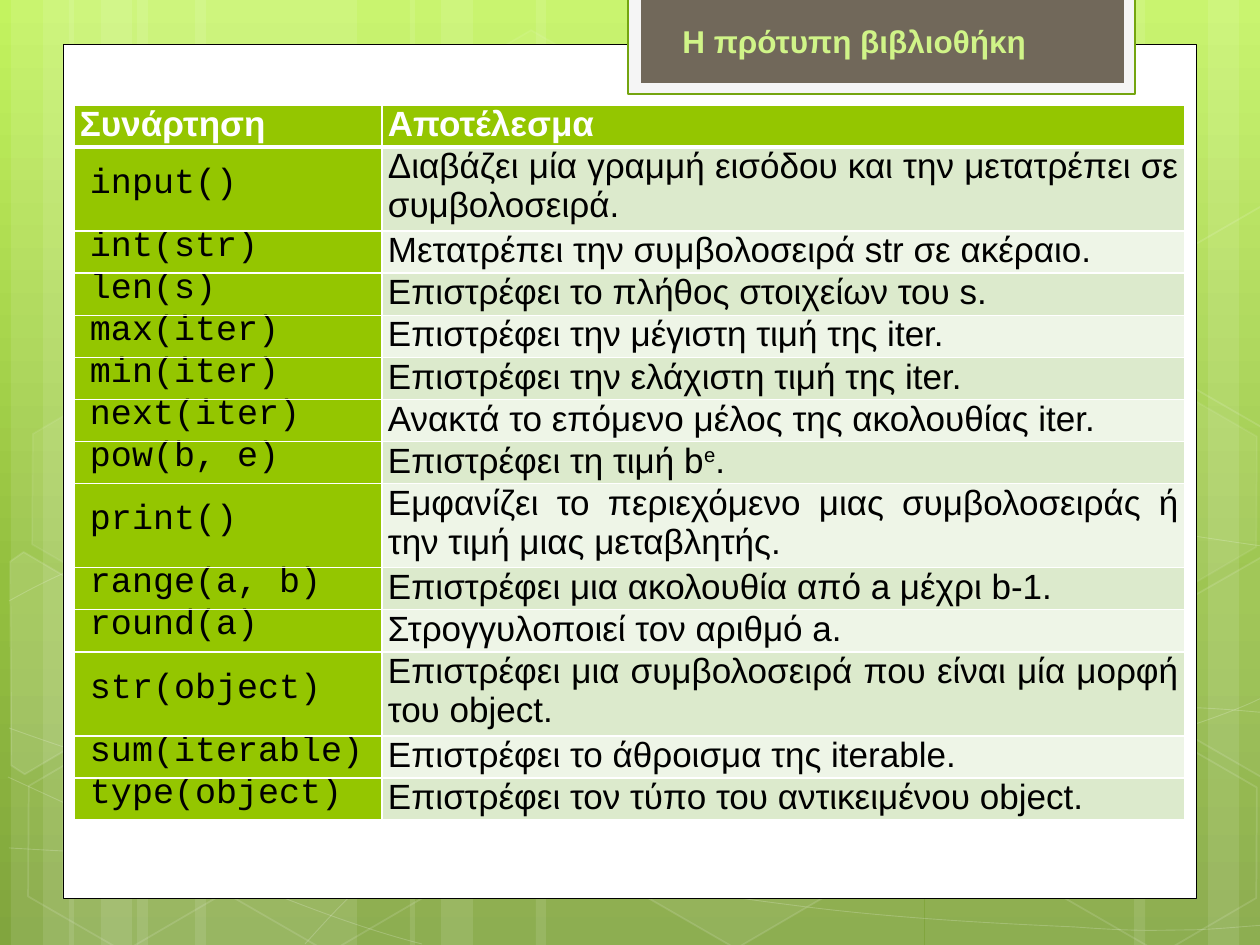
import math

import lxml.etree
import pptx
import pptx.dml.color
import pptx.enum.shapes
import pptx.enum.text
import pptx.oxml.ns
import pptx.util

SCALE = 914400 / 126
COLORS = {
    "white": "FFFFFF", "black": "000000", "sky": "C3F35F", "grass": "93BF3F",
    "moss": "81A53E", "tab": "F5F5F5", "tab_line": "74A510", "plate": "71685A",
    "title": "D0F488", "green": "94C600", "odd_row": "DCEACC", "even_row": "EEF5E7",
}
SHAPES = pptx.enum.shapes.MSO_SHAPE
ALIGN = pptx.enum.text.PP_ALIGN
ANCHOR = pptx.enum.text.MSO_ANCHOR
qn = pptx.oxml.ns.qn

BANDS = [(137, 220, 0), (11, 63, 0), (43, 105, 0), (195, 220, 0), (69, 63, 0), (101, 105, 0),
         (925, 220, 180), (1208, 63, 180), (1134, 105, 180),
         (536, 388, 0), (410, 63, 0), (441, 105, 0)]
CURVES = [
    [(9, 848), (77, 852), (145, 856), (239, 854), (334, 853), (451, 851), (577, 838),
     (703, 825), (882, 801), (998, 777), (1113, 753), (1231, 716), (1269, 694)],
    [(9, 601), (45, 581), (82, 562), (152, 543), (224, 524), (326, 496), (437, 488),
     (549, 479), (685, 478), (824, 488), (963, 498), (1193, 537), (1269, 547)],
    [(8, 777), (160, 847), (311, 916), (422, 944)],
    [(9, 728), (48, 742), (88, 756), (161, 776), (234, 795), (344, 827), (450, 848),
     (554, 869), (687, 892), (791, 905), (896, 919), (1008, 924), (1075, 927),
     (1142, 932), (1158, 930), (1191, 930), (1223, 929), (1246, 926), (1269, 925)],
    [(305, 944), (328, 919), (350, 893), (381, 871), (411, 847), (454, 823), (489, 805),
     (524, 788), (546, 780), (591, 767), (638, 755), (722, 737), (766, 728),
     (811, 719), (818, 719), (857, 717), (896, 713), (958, 709), (1000, 708),
     (1045, 707), (1116, 708), (1116, 708), (1116, 708), (1201, 708), (1201, 708),
     (1223, 709), (1245, 711), (1256, 712), (1268, 713), (1264, 712), (1268, 713)],
]
HEXAGONS = [(421, 45, 4, 8), (626, 742, 6, 12), (14, 745, 0, 12), (18, 393, 7, 8),
            (219, 746, 0, 12), (949, 571, 10, 12), (1051, 747, 0, 12), (1051, 396, 7, 8)]
CUT_HEXAGONS = [
    ((45, 675), [(10, 561), (24, 552), (121, 609), (120, 718), (25, 774), (11, 765)], 10),
    ((1241, 655), [(1167, 611), (1263, 556), (1271, 562), (1271, 772), (1263, 777),
                   (1167, 722)], 4),
    ((1241, 304), [(1167, 261), (1263, 205), (1273, 212), (1271, 422), (1263, 427),
                   (1167, 372)], 0),
]
TILT = 30
FUNCTIONS = [
    ("input()", "Διαβάζει μία γραμμή εισόδου και την μετατρέπει σε συμβολοσειρά."),
    ("int(str)", "Μετατρέπει την συμβολοσειρά str σε ακέραιο."),
    ("len(s)", "Επιστρέφει το πλήθος στοιχείων του s."),
    ("max(iter)", "Επιστρέφει την μέγιστη τιμή της iter."),
    ("min(iter)", "Επιστρέφει την ελάχιστη τιμή της iter."),
    ("next(iter)", "Ανακτά το επόμενο μέλος της ακολουθίας iter."),
    ("pow(b, e)", "Επιστρέφει τη τιμή b^e^."),
    ("print()", "Εμφανίζει το περιεχόμενο μιας συμβολοσειράς ή την τιμή μιας μεταβλητής."),
    ("range(a, b)", "Επιστρέφει μια ακολουθία από a μέχρι b-1."),
    ("round(a)", "Στρογγυλοποιεί τον αριθμό a."),
    ("str(object)", "Επιστρέφει μια συμβολοσειρά που είναι μία μορφή του object."),
    ("sum(iterable)", "Επιστρέφει το άθροισμα της iterable."),
    ("type(object)", "Επιστρέφει τον τύπο του αντικειμένου object."),
]
TWO_LINE_ROWS = {"input()", "print()", "str(object)"}


def px(length):
    return pptx.util.Emu(round(length * SCALE))


def rgb(name):
    return pptx.dml.color.RGBColor.from_string(COLORS[name])


def paint(fill, color, opacity=100):
    if not opacity:
        fill.background()
        return
    fill.solid()
    fill.fore_color.rgb = rgb(color)
    if opacity < 100:
        holder = fill._xPr.find(".//" + qn("a:srgbClr"))
        lxml.etree.SubElement(holder, qn("a:alpha"), val=str(opacity * 1000))


def style(shape, fill, opacity=100, line=None, width=1, line_opacity=100):
    shape.shadow.inherit = False
    paint(shape.fill, fill, opacity)
    if line:
        shape.line.width = pptx.util.Pt(width)
        paint(shape.line.fill, line, line_opacity)
    else:
        shape.line.fill.background()


def add_block(owner, kind, left, top, width, height, *look):
    shape = owner.shapes.add_shape(kind, px(left), px(top), px(width), px(height))
    style(shape, *look)
    return shape


def add_outline(owner, points, closed, *look):
    builder = owner.shapes.build_freeform(*points[0], scale=SCALE)
    builder.add_line_segments(points[1:], close=closed)
    shape = builder.convert_to_shape()
    style(shape, *look)
    return shape


def add_curve(owner, knots):
    shape = add_outline(owner, knots, False, "white", 0, "white", 0.5, 20)
    segments = shape._element.findall(".//" + qn("a:lnTo"))
    outline = segments[0].getparent()
    for start in range(0, len(segments), 3):
        bend = lxml.etree.SubElement(outline, qn("a:cubicBezTo"))
        for segment in segments[start:start + 3]:
            bend.append(segment[0])
            outline.remove(segment)


def turn_back(point, center):
    angle = math.radians(TILT)
    across, down = point[0] - center[0], point[1] - center[1]
    return (round(center[0] + across * math.cos(angle) + down * math.sin(angle)),
            round(center[1] - across * math.sin(angle) + down * math.cos(angle)))


def add_span(para, text, size, font, color, bold=False):
    span = para.add_run()
    span.text = text
    span.font.size = pptx.util.Pt(size)
    span.font.name = font
    span.font.bold = bold
    span.font.color.rgb = rgb(color)
    return span


def set_background(page):
    page.background.fill.gradient()
    stops = page.element.find(".//" + qn("a:gsLst"))
    for stop in list(stops):
        stops.remove(stop)
    for position, color in ((0, "sky"), (62, "grass"), (100, "moss")):
        stop = lxml.etree.SubElement(stops, qn("a:gs"), pos=str(position * 1000))
        lxml.etree.SubElement(stop, qn("a:srgbClr"), val=COLORS[color])
    page.element.find(".//" + qn("a:lin")).set("ang", "5400000")


def add_backdrop(page):
    backdrop = page.shapes.add_group_shape()
    for left, width, turn in BANDS:
        band = add_block(backdrop, SHAPES.RECTANGLE, left, 0, width, 945, "white", 10)
        band.rotation = turn
    for knots in CURVES:
        add_curve(backdrop, knots)
    for left, top, opacity, line_opacity in HEXAGONS:
        hexagon = add_block(backdrop, SHAPES.HEXAGON, left, top, 220, 192,
                            "white", opacity, "white", 1, line_opacity)
        hexagon.adjustments[0] = 0.285
        hexagon.rotation = TILT
    for center, corners, opacity in CUT_HEXAGONS:
        points = [turn_back(corner, center) for corner in corners]
        add_outline(backdrop, points, True, "white", opacity, "white", 1, 12).rotation = TILT


def add_title(page):
    add_block(page, SHAPES.RECTANGLE, 628, -3, 507, 97, "tab", 100, "tab_line", 1.25)
    add_block(page, SHAPES.RECTANGLE, 641, -3, 483, 86, "plate")
    box = page.shapes.add_textbox(px(670), px(16), px(373), px(50))
    box.text_frame.word_wrap = False
    add_span(box.text_frame.paragraphs[0], "Η πρότυπη βιβλιοθήκη", 18, "Arial", "title", True)


def prepare_cell(cell, fill, bottom=1):
    cell.margin_left = cell.margin_right = px(6)
    cell.margin_top = cell.margin_bottom = 0
    properties = cell._tc.get_or_add_tcPr()
    for side, width in (("L", 1), ("R", 1), ("T", 1), ("B", bottom)):
        border = lxml.etree.SubElement(properties, qn("a:ln" + side), w=str(width * 12700))
        solid = lxml.etree.SubElement(border, qn("a:solidFill"))
        lxml.etree.SubElement(solid, qn("a:srgbClr"), val=COLORS["white"])
    paint(cell.fill, fill)
    return cell.text_frame.paragraphs[0]


def fill_text_cell(cell, text, fill, color="black", bold=False, bottom=1):
    para = prepare_cell(cell, fill, bottom)
    para.alignment = ALIGN.JUSTIFY
    para.space_after = pptx.util.Pt(6)
    for index, part in enumerate(text.split("^")):
        span = add_span(para, part, 20, "Arial", color, bold)
        if index % 2:
            span.font._element.set("baseline", "30000")


def fill_code_cell(cell, code):
    para = prepare_cell(cell, "green")
    cell.vertical_anchor = ANCHOR.MIDDLE
    para.line_spacing = pptx.util.Pt(16.8)
    para._p.get_or_add_pPr().set("marL", str(px(10)))
    add_span(para, code, 20, "Courier New", "black")


def add_function_table(page):
    frame = page.shapes.add_table(len(FUNCTIONS) + 1, 2, px(74), px(105), px(1111), px(714))
    table = frame.table
    for column, width in zip(table.columns, (308, 803)):
        column.width = px(width)
    table.rows[0].height = px(42)
    for cell, heading in zip(table.rows[0].cells, ("Συνάρτηση", "Αποτέλεσμα")):
        fill_text_cell(cell, heading, "green", "white", True, 3)
    for index, (code, result) in enumerate(FUNCTIONS, 1):
        table.rows[index].height = px(84 if code in TWO_LINE_ROWS else 42)
        fill_code_cell(table.cell(index, 0), code)
        fill_text_cell(table.cell(index, 1), result, "odd_row" if index % 2 else "even_row")


def main():
    deck = pptx.Presentation()
    deck.slide_width, deck.slide_height = px(1260), px(945)
    page = deck.slides.add_slide(deck.slide_layouts[6])
    set_background(page)
    add_backdrop(page)
    add_block(page, SHAPES.RECTANGLE, 63, 45, 1134, 854, "white", 100, "black", 0.5)
    add_title(page)
    add_function_table(page)
    deck.save("out.pptx")


if __name__ == "__main__":
    main()
